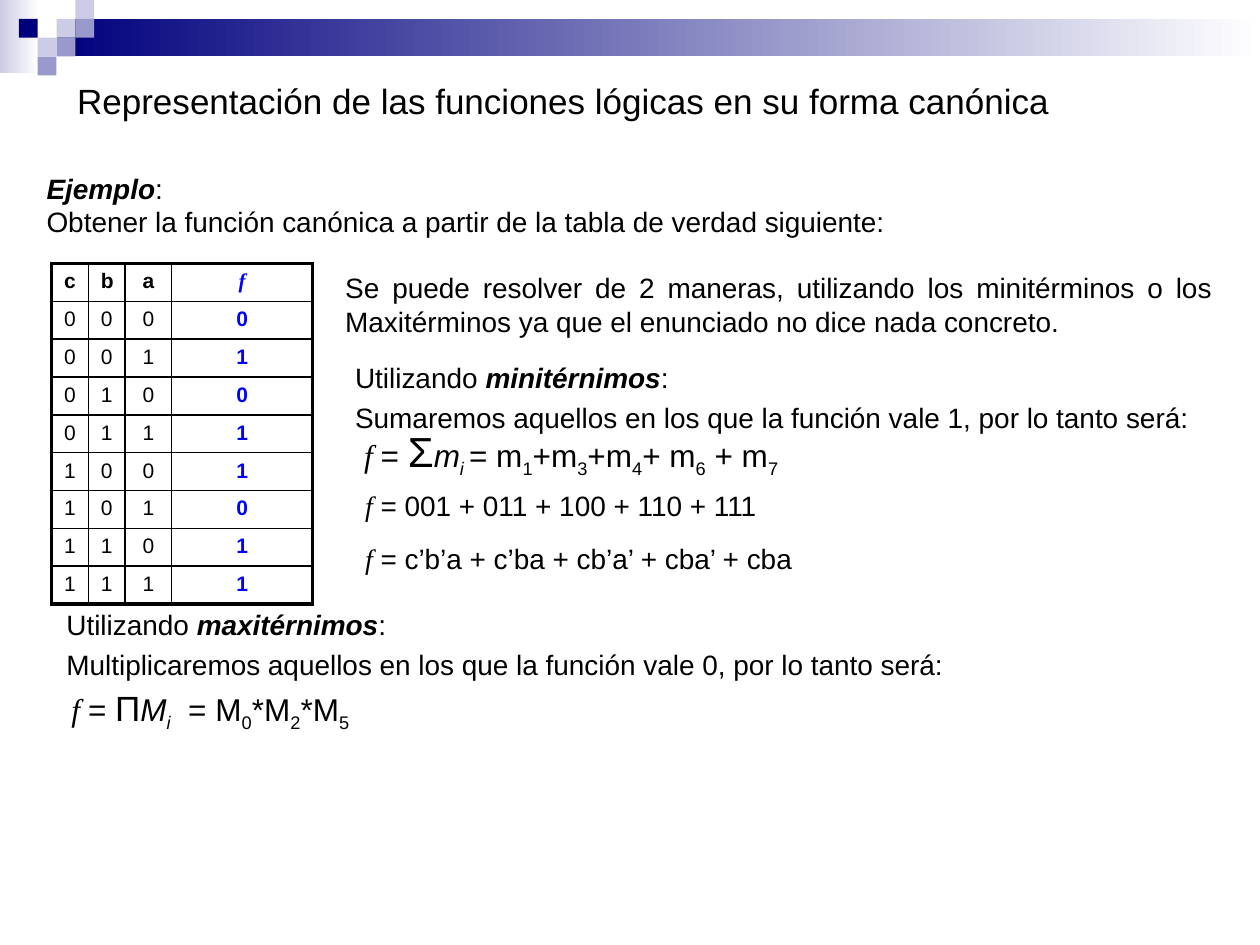
from lxml import etree
from pptx import Presentation
from pptx.dml.color import RGBColor
from pptx.enum.shapes import MSO_SHAPE
from pptx.enum.text import MSO_ANCHOR, PP_ALIGN
from pptx.oxml.ns import qn
from pptx.util import Cm, Pt

RECTANGLE = MSO_SHAPE.RECTANGLE
TOP, MIDDLE = MSO_ANCHOR.TOP, MSO_ANCHOR.MIDDLE
LEFT, CENTER, JUSTIFY = PP_ALIGN.LEFT, PP_ALIGN.CENTER, PP_ALIGN.JUSTIFY

BLACK, BLUE, WHITE = "000000", "0000FF", "FFFFFF"
NAVY, LAVENDER, LILAC = "00007D", "CCCCE6", "9999CC"
SANS, SERIF = "Arial", "Times New Roman"

STRONG = {"bold": True, "italic": True}
FUNCTION = {"font": SERIF, "italic": True}


def color(value):
    return RGBColor.from_string(value)


def write(para, text, size=16, font=SANS, ink=BLACK, bold=False, italic=False, subscript=False):
    span = para.add_run()
    span.text = text
    span.font.size = Pt(size)
    span.font.name = font
    span.font.color.rgb = color(ink)
    span.font.bold = bold
    span.font.italic = italic
    if subscript:
        span.font._element.set("baseline", "-25000")


def add_text(page, box, paragraphs, align=JUSTIFY, wrap=True):
    """Each paragraph is a list of (text, format) pairs."""
    frame = page.shapes.add_textbox(*map(Cm, box)).text_frame
    frame.word_wrap = wrap
    frame.vertical_anchor = TOP
    for index, spans in enumerate(paragraphs):
        para = frame.add_paragraph() if index else frame.paragraphs[0]
        para.alignment = align
        for text, style in spans:
            write(para, text, **style)


def add_block(page, box, fill, fade_to=None):
    block = page.shapes.add_shape(RECTANGLE, *map(Cm, box))
    block.shadow.inherit = False
    block.line.fill.background()
    if fade_to is None:
        block.fill.solid()
        block.fill.fore_color.rgb = color(fill)
        return
    block.fill.gradient()
    block.fill.gradient_angle = 0
    for stop, shade in zip(block.fill.gradient_stops, (fill, fade_to)):
        stop.color.rgb = color(shade)


def add_banner(page, left, top, width):
    unit = 0.38
    add_block(page, (left, top, 0.79, 1.47), LAVENDER, WHITE)
    add_block(page, (left + 3 * unit, top + unit, width - 3 * unit, 2 * unit), NAVY, WHITE)
    squares = [
        (3, 1, LAVENDER), (4, 0, LAVENDER), (4, 1, LILAC), (2, 2, LAVENDER),
        (1, 1, NAVY), (3, 2, LILAC), (2, 3, LILAC),
    ]
    for column, row, fill in squares:
        add_block(page, (left + column * unit, top + row * unit, unit, unit), fill)


def set_title(page, box, text):
    title = page.shapes.title
    title.left, title.top, title.width, title.height = map(Cm, box)
    title.text_frame.vertical_anchor = MIDDLE
    para = title.text_frame.paragraphs[0]
    para.alignment = LEFT
    write(para, text, size=20)


def set_border(cell, side, width):
    line = etree.SubElement(cell._tc.get_or_add_tcPr(), qn(f"a:ln{side}"), w=str(Pt(width)))
    fill = etree.SubElement(line, qn("a:solidFill"))
    etree.SubElement(fill, qn("a:srgbClr"), val=BLACK)


def add_truth_table(page, left, top, outputs):
    """Three inputs c, b, a counted in binary, and the output f."""
    widths, row_height = (0.74, 0.74, 0.94, 2.84), 0.76
    rows = ["cbaf"] + [f"{number:03b}{output}" for number, output in enumerate(outputs)]
    last_row, last_column = len(rows) - 1, len(widths) - 1
    table = page.shapes.add_table(
        len(rows), len(widths), Cm(left), Cm(top), Cm(sum(widths)), Cm(row_height * len(rows))
    ).table
    table.first_row = table.horz_banding = False
    for column, width in zip(table.columns, widths):
        column.width = Cm(width)
    for y, values in enumerate(rows):
        table.rows[y].height = Cm(row_height)
        for x, value in enumerate(values):
            cell = table.cell(y, x)
            outer = {"L": x == 0, "R": x == last_column, "T": y == 0, "B": y == last_row}
            for side, is_outer in outer.items():
                set_border(cell, side, 2.25 if is_outer else 1)
            cell.fill.background()
            para = cell.text_frame.paragraphs[0]
            para.alignment = CENTER
            is_output = x == last_column
            style = FUNCTION if value == "f" else {}
            write(para, value, size=12, ink=BLUE if is_output else BLACK,
                  bold=is_output or y == 0, **style)


def expansion(symbol, symbol_size, letter, index, terms):
    """Spans of f = symbol letter_index, then each (text, subscript) term."""
    large = {"size": 18}
    low = {"size": 18, "subscript": True}
    spans = [
        ("f ", large | FUNCTION),
        ("= ", large),
        (symbol, {"size": symbol_size}),
        (letter, large | {"italic": True}),
        (index, low | {"italic": True}),
    ]
    for text, number in terms:
        spans += [(text, large), (number, low)]
    return spans


def add_method(page, left, top, width, name, rule):
    """Heading of a method, with its rule below."""
    heading = [("Utilizando ", {}), (name, STRONG), (":", {})]
    for row, spans in enumerate((heading, [(rule, {})])):
        add_text(page, (left, top + row * 0.8, width, 0.99), [spans])


def add_minterms(page, left, top):
    add_method(page, left, top, 17.8, "minitérnimos",
               "Sumaremos aquellos en los que la función vale 1, por lo tanto será:")
    terms = [("= m", "1"), ("+m", "3"), ("+m", "4"), ("+ m", "6"), (" + m", "7")]
    add_text(page, (left + 0.18, top + 1.32, 9.02, 1.27),
             [expansion("Σ", 24, "m", "i ", terms)], align=LEFT, wrap=False)
    sums = [
        (2.59, 8.61, " = 001 + 011 + 100 + 110 + 111"),
        (3.66, 9.19, " = c’b’a + c’ba + cb’a’ + cba’ + cba"),
    ]
    for offset, width, text in sums:
        add_text(page, (left + 0.2, top + offset, width, 0.94),
                 [[("f", FUNCTION), (text, {})]], wrap=False)


def add_maxterms(page, left, top):
    add_method(page, left, top, 19.81, "maxitérnimos",
               "Multiplicaremos aquellos en los que la función vale 0, por lo tanto será:")
    terms = [("  = M", "0"), ("*M", "2"), ("*M", "5")]
    add_text(page, (left, top + 1.6, 6.3, 1.63),
             [expansion("Π", 20, "M", "i", terms)], align=CENTER, wrap=False)


def main():
    deck = Presentation()
    deck.slide_width, deck.slide_height = Cm(25.4), Cm(19.05)
    page = deck.slides.add_slide(deck.slide_layouts[5])
    add_banner(page, 0, 0, 25.4)
    set_title(page, (1.3, 1.32, 22.86, 1.4),
              "Representación de las funciones lógicas en su forma canónica")
    add_text(page, (0.69, 3.33, 24, 1.6), [
        [("Ejemplo", STRONG), (":", {})],
        [("Obtener la función canónica a partir de la tabla de verdad siguiente:", {})],
    ], align=LEFT)
    add_truth_table(page, 1.04, 5.31, "01011011")
    add_text(page, (6.71, 5.33, 17.98, 1.8), [[(
        "Se puede resolver de 2 maneras, utilizando los minitérminos o los "
        "Maxitérminos ya que el enunciado no dice nada concreto.", {})]])
    add_minterms(page, 6.91, 7.14)
    add_maxterms(page, 1.09, 12.12)
    deck.save("out.pptx")


if __name__ == "__main__":
    main()
